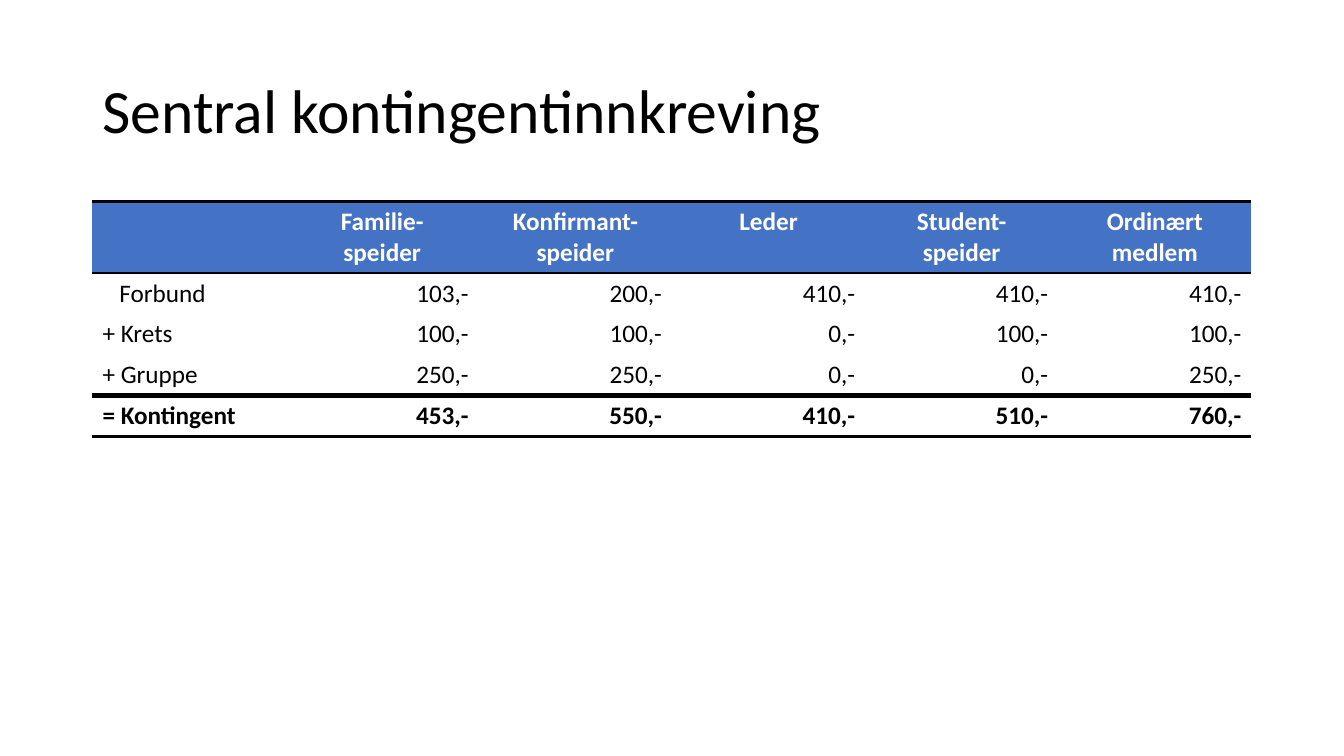
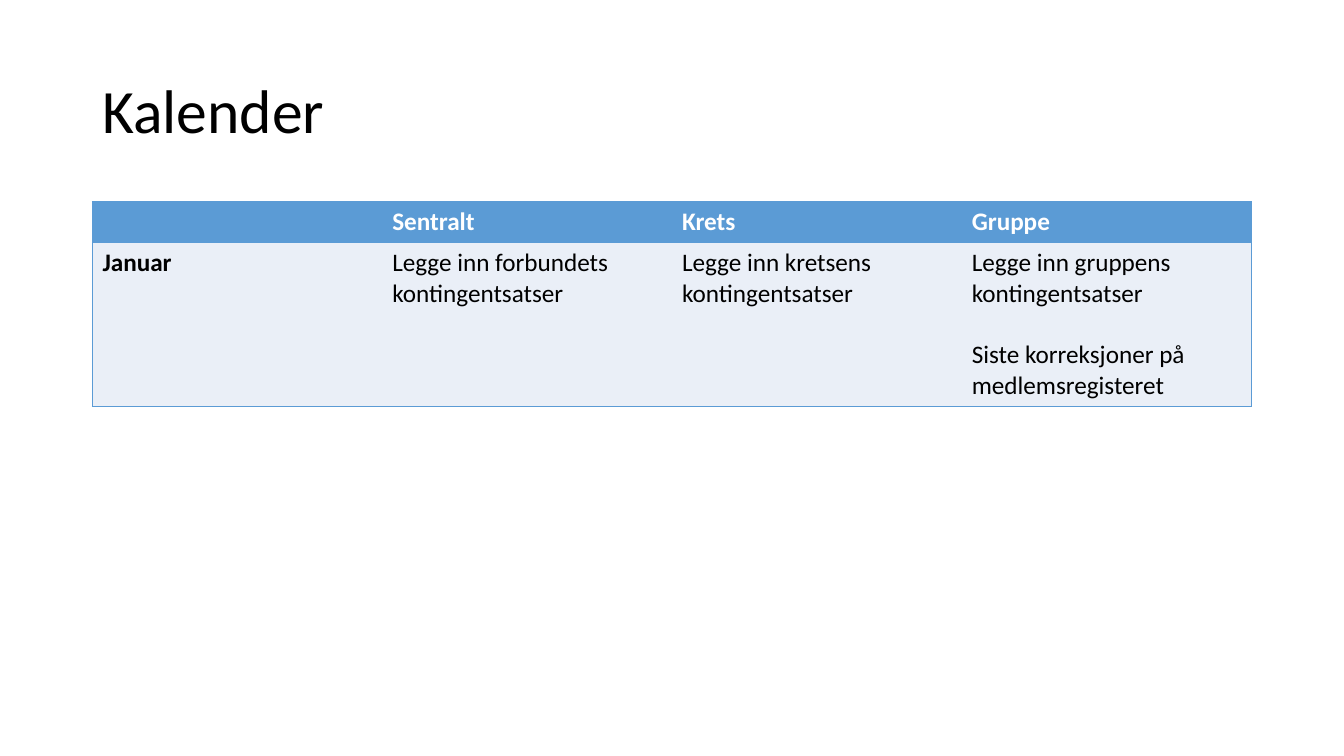
from lxml import etree
from pptx import Presentation
from pptx.dml.color import RGBColor
from pptx.enum import text
from pptx.oxml import ns
from pptx.util import Cm, Pt

FONT = "Calibri"
BLACK = RGBColor(0x00, 0x00, 0x00)
WHITE = RGBColor(0xFF, 0xFF, 0xFF)
BLUE = RGBColor(0x44, 0x72, 0xC4)
SKY = RGBColor(0x5B, 0x9B, 0xD5)
PALE = RGBColor(0xEA, 0xEF, 0xF7)
NO_GRID_STYLE = "{2D5ABB26-0587-4C30-8999-92F81FD0307C}"

LEFT, WIDTH = Cm(2.33), Cm(29.21)
TITLE_BOX = (LEFT, Cm(1.01), WIDTH, Cm(3.68))
TABLE_TOP = Cm(5.08)
ROW_HEIGHT = Cm(1.03)
LEAD_INDENT = Cm(0.68)
BODY_SIZE = Pt(18)
BLANK_LINE = Pt(22)
ALIGN = text.PP_ALIGN

FEES = [
    ["", "Familie-\nspeider", "Konfirmant-\nspeider", "Leder", "Student-\nspeider", "Ordinært\nmedlem"],
    ["Forbund", "103,-", "200,-", "410,-", "410,-", "410,-"],
    ["+ Krets", "100,-", "100,-", "0,-", "100,-", "100,-"],
    ["+ Gruppe", "250,-", "250,-", "0,-", "0,-", "250,-"],
    ["= Kontingent", "453,-", "550,-", "410,-", "510,-", "760,-"],
]
CALENDAR = [
    ["", "Sentralt", "Krets", "Gruppe"],
    ["Januar", "Legge inn forbundets kontingentsatser", "Legge inn kretsens kontingentsatser",
     ["Legge inn gruppens kontingentsatser", "Siste korreksjoner på medlemsregisteret"]],
]


def style_runs(p, **formats):
    for r in p.runs:
        r.font.name = FONT
        r.font.color.rgb = formats["color"]
        for name in ("size", "bold"):
            setattr(r.font, name, formats[name])


def add_title(s, box, title):
    tf = s.shapes.add_textbox(*box).text_frame
    tf.word_wrap = True
    tf.vertical_anchor = text.MSO_ANCHOR.MIDDLE
    p = tf.paragraphs[0]
    p.text = title
    p.line_spacing = 0.9
    style_runs(p, size=Pt(44), bold=False, color=BLACK)


def set_borders(cell, color, widths):
    """Draw borders from a dict of side (L, R, T, B) to points; call before filling."""
    tc_pr = cell._tc.get_or_add_tcPr()
    for side in "LRTB":
        if side in widths:
            ln = etree.SubElement(tc_pr, ns.qn(f"a:ln{side}"), w=str(Pt(widths[side])))
            fill = etree.SubElement(ln, ns.qn("a:solidFill"))
            etree.SubElement(fill, ns.qn("a:srgbClr"), val=str(color))


def fill_cell(cell, content, fill, color, bold, align):
    cell.fill.solid()
    cell.fill.fore_color.rgb = fill
    tf = cell.text_frame
    paragraphs = content if isinstance(content, list) else [content]
    for i, line in enumerate(paragraphs):
        p = tf.add_paragraph() if i else tf.paragraphs[0]
        p.text = line
        p.alignment = align
        if i:
            p.space_before = BLANK_LINE
        style_runs(p, size=BODY_SIZE, bold=bold, color=color)


def add_plain_table(s, left, top, width, heights, columns):
    frame = s.shapes.add_table(len(heights), columns, left, top, width, sum(heights))
    table = frame.table
    table.horz_banding = False
    table._tbl.tblPr.find(ns.qn("a:tableStyleId")).text = NO_GRID_STYLE
    for column in table.columns:
        column.width = width // columns
    for row, height in zip(table.rows, heights):
        row.height = height
    return table


def add_fee_table(s, left, top, width):
    heights = [Cm(1.8)] + [ROW_HEIGHT] * (len(FEES) - 1)
    table = add_plain_table(s, left, top, width, heights, len(FEES[0]))
    last = len(FEES) - 1
    borders = {0: {"T": 2, "B": 2}, last: {"T": 4, "B": 2}}
    for i, row in enumerate(FEES):
        header = i == 0
        for j, content in enumerate(row):
            cell = table.cell(i, j)
            set_borders(cell, BLACK, borders.get(i, {}))
            align = ALIGN.CENTER if header else ALIGN.RIGHT if j else ALIGN.LEFT
            fill_cell(cell, content, BLUE if header else WHITE, WHITE if header else BLACK,
                      i in borders, align)
    table.cell(1, 0).margin_left = LEAD_INDENT


def add_calendar_table(s, left, top, width):
    columns = len(CALENDAR[0])
    table = add_plain_table(s, left, top, width, [ROW_HEIGHT, Cm(4.13)], columns)
    for i, row in enumerate(CALENDAR):
        header = i == 0
        for j, content in enumerate(row):
            cell = table.cell(i, j)
            sides = "TB" + ("L" if j == 0 else "R" if j == columns - 1 else "")
            set_borders(cell, SKY, dict.fromkeys(sides, 1))
            fill_cell(cell, content, SKY if header else PALE, WHITE if header else BLACK,
                      header or j == 0, ALIGN.LEFT)


def main():
    prs = Presentation()
    prs.slide_width, prs.slide_height = Cm(33.87), Cm(19.05)
    for title, add_content in (("Sentral kontingentinnkreving", add_fee_table),
                               ("Kalender", add_calendar_table)):
        s = prs.slides.add_slide(prs.slide_layouts[6])
        add_title(s, TITLE_BOX, title)
        add_content(s, LEFT, TABLE_TOP, WIDTH)
    prs.save("out.pptx")


if __name__ == "__main__":
    main()
